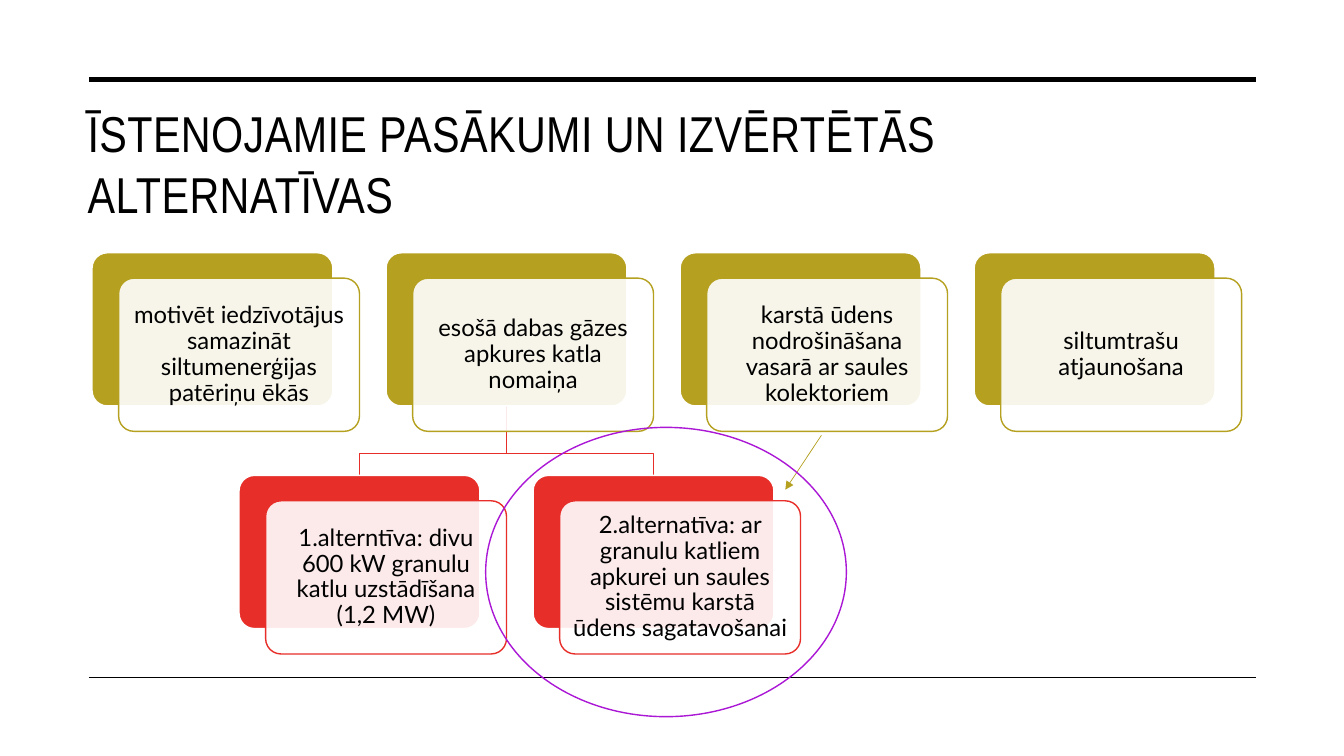
from lxml import etree
from pptx import Presentation
from pptx.dml.color import RGBColor
from pptx.enum.shapes import MSO_CONNECTOR as Connector, MSO_SHAPE as Shape
from pptx.enum.text import MSO_ANCHOR as Anchor, PP_ALIGN as Align
from pptx.oxml.ns import qn
from pptx.util import Cm, Pt

BLACK = RGBColor(0x00, 0x00, 0x00)
WHITE = RGBColor(0xFF, 0xFF, 0xFF)
OLIVE = RGBColor(0xB5, 0xA0, 0x20)
RED = RGBColor(0xE7, 0x2E, 0x29)
PURPLE = RGBColor(0xAA, 0x17, 0xD5)

CARD_WIDTH, CARD_HEIGHT = 6.07, 3.86
CARD_PITCH = 7.41
CARD_SHIFT_X, CARD_SHIFT_Y = 0.67, 0.64
MEASURES_LEFT, MEASURES_TOP = 2.32, 6.37
ALTERNATIVES_LEFT, ALTERNATIVES_TOP = MEASURES_LEFT + CARD_PITCH / 2, 11.98
BRANCH_Y = 11.43

MEASURES = [
    "motivēt iedzīvotājus samazināt siltumenerģijas patēriņu ēkās",
    "esošā dabas gāzes apkures katla nomaiņa",
    "karstā ūdens nodrošināšana vasarā ar saules kolektoriem",
    "siltumtrašu atjaunošana",
]
ALTERNATIVES = [
    "1.alterntīva: divu 600 kW granulu katlu uzstādīšana (1,2 MW)",
    "2.alternatīva: ar granulu katliem apkurei un saules sistēmu karstā "
    "ūdens sagatavošanai",
]


def add_title(slide, text):
    title = slide.shapes.add_textbox(Cm(1.96), Cm(2.51), Cm(29.69), Cm(3.2))
    frame = title.text_frame
    frame.word_wrap = True
    frame.vertical_anchor = Anchor.MIDDLE
    paragraph = frame.paragraphs[0]
    run = paragraph.add_run()
    run.text = text
    run.font.name = "Arial Narrow"
    run.font.size = Pt(36)
    run.font.color.rgb = BLACK
    run.font._element.set("spc", "30")


def add_line(slide, start, end, color, width):
    line = slide.shapes.add_connector(
        Connector.STRAIGHT, *(Cm(length) for length in (*start, *end)))
    line.line.color.rgb = color
    line.line.width = Pt(width)
    etree.SubElement(line._element.spPr, qn("a:effectLst"))
    return line


def add_arrow(slide, start, end, color, width):
    arrow = add_line(slide, start, end, color, width)
    etree.SubElement(arrow.line._get_or_add_ln(), qn("a:tailEnd"), type="triangle")


def add_branch(slide, trunk_x, trunk_y, end_x, end_y):
    """Draw a bent line from a measure down to one of its alternatives."""
    builder = slide.shapes.build_freeform(Cm(trunk_x), Cm(trunk_y))
    builder.add_line_segments(
        [(Cm(trunk_x), Cm(BRANCH_Y)), (Cm(end_x), Cm(BRANCH_Y)), (Cm(end_x), Cm(end_y))],
        close=False)
    branch = builder.convert_to_shape()
    branch.shadow.inherit = False
    branch.fill.background()
    branch.line.color.rgb = RED
    branch.line.width = Pt(1)


def add_panel(slide, left, top, fill, outline):
    panel = slide.shapes.add_shape(
        Shape.ROUNDED_RECTANGLE, Cm(left), Cm(top), Cm(CARD_WIDTH), Cm(CARD_HEIGHT))
    panel.adjustments[0] = 0.1
    panel.shadow.inherit = False
    panel.fill.solid()
    panel.fill.fore_color.rgb = fill
    panel.line.color.rgb = outline
    panel.line.width = Pt(1)
    return panel


def add_card(slide, left, top, text, color):
    """Draw a coloured panel with a nearly opaque white text panel over it."""
    add_panel(slide, left, top, color, WHITE)
    front = add_panel(slide, left + CARD_SHIFT_X, top + CARD_SHIFT_Y, WHITE, color)
    fill_color = front._element.spPr.find(qn("a:solidFill")).find(qn("a:srgbClr"))
    etree.SubElement(fill_color, qn("a:alpha"), val="90000")

    frame = front.text_frame
    frame.word_wrap = True
    frame.vertical_anchor = Anchor.MIDDLE
    frame.margin_left = frame.margin_right = Cm(0.18)
    frame.margin_top = frame.margin_bottom = Cm(0.18)
    paragraph = frame.paragraphs[0]
    paragraph.text = text
    paragraph.alignment = Align.CENTER
    paragraph.line_spacing = 0.9
    paragraph.font.name = "Lato"
    paragraph.font.size = Pt(17)
    paragraph.font.color.rgb = BLACK


def add_card_row(slide, left, top, texts, color):
    for column, text in enumerate(texts):
        add_card(slide, left + column * CARD_PITCH, top, text, color)


def add_highlight(slide):
    highlight = slide.shapes.add_shape(
        Shape.OVAL, Cm(12.24), Cm(10.77), Cm(9.09), Cm(7.29))
    highlight.shadow.inherit = False
    highlight.fill.background()
    highlight.line.color.rgb = PURPLE
    highlight.line.width = Pt(1)


def main():
    presentation = Presentation()
    presentation.slide_width, presentation.slide_height = Cm(33.87), Cm(19.05)
    slide = presentation.slides.add_slide(presentation.slide_layouts[6])

    add_title(slide, "ĪSTENOJAMIE PASĀKUMI UN IZVĒRTĒTĀS ALTERNATĪVAS")
    for rule_y, width in ((2.01, 3.5), (17.07, 1)):
        add_line(slide, (2.24, rule_y), (31.65, rule_y), BLACK, width)

    boiler_x = MEASURES_LEFT + CARD_PITCH + CARD_WIDTH / 2
    for side in (1, -1):
        add_branch(slide, boiler_x, MEASURES_TOP + CARD_HEIGHT,
                   boiler_x + side * CARD_PITCH / 2, ALTERNATIVES_TOP)
    add_card_row(slide, MEASURES_LEFT, MEASURES_TOP, MEASURES, OLIVE)
    add_card_row(slide, ALTERNATIVES_LEFT, ALTERNATIVES_TOP, ALTERNATIVES, RED)

    add_arrow(slide, (20.7, 10.97), (19.79, 12.34), OLIVE, 0.5)
    add_highlight(slide)
    presentation.save("out.pptx")


if __name__ == "__main__":
    main()
